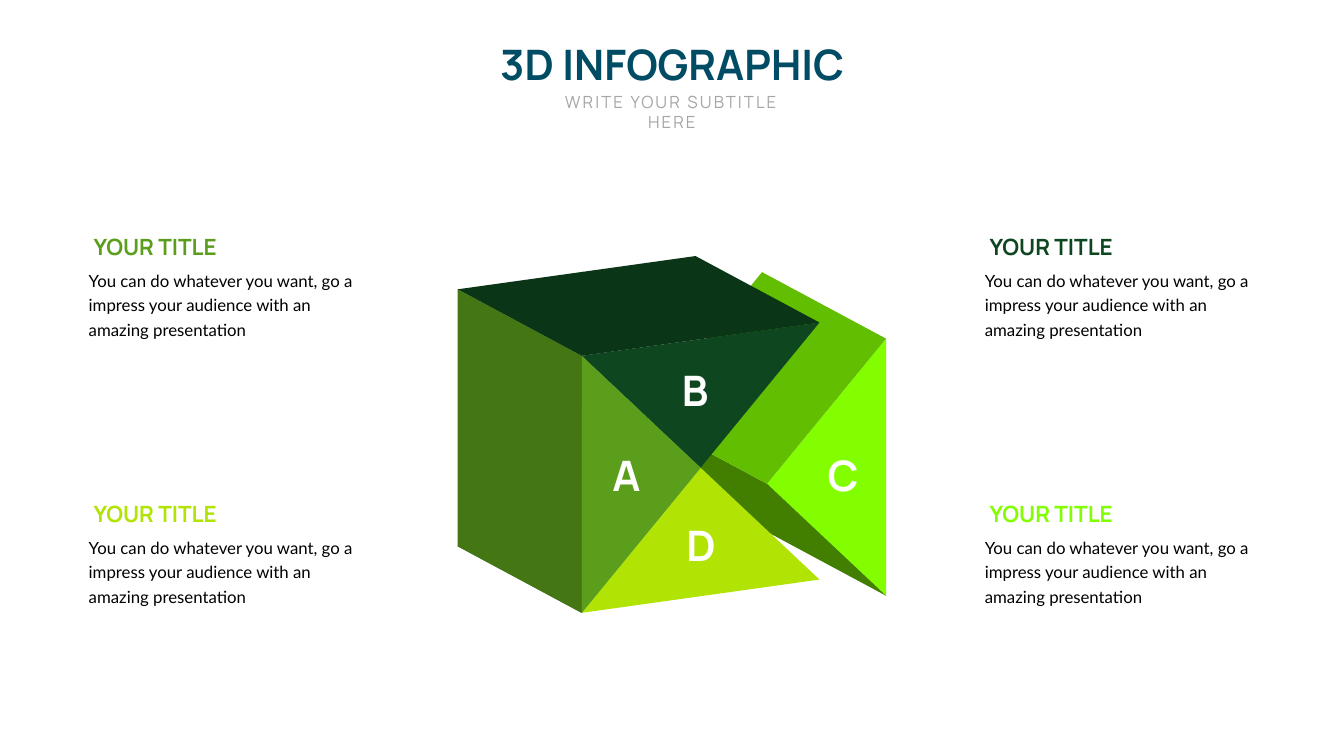
from pptx import Presentation
from pptx import util as u
from pptx.dml import color
from pptx.enum import text

WHITE, LEAF, FOREST, LIME, NEON = "FFFFFF", "5B9E1B", "0E461F", "B1E305", "83FE00"
GRID_COLUMNS, GRID_ROWS = 133.33, 75
DEPTH = (-12.3, -6.6)


def cells(count):
    return u.Inches(count / 10)


def rgb(value):
    return color.RGBColor.from_string(value)


def assign(target, values):
    for key, value in values.items():
        setattr(target, key, value)


def pushed_back(corner):
    return corner[0] + DEPTH[0], corner[1] + DEPTH[1]


def side(near, far):
    return [near, pushed_back(near), pushed_back(far), far]


class Infographic:
    display = {"name": "Manrope", "bold": True}
    subtitle = {"name": "Manrope", "size": u.Pt(12)}
    body = {"name": "Lato", "size": u.Pt(12)}
    top = {"vertical_anchor": text.MSO_ANCHOR.TOP}
    middle = {"vertical_anchor": text.MSO_ANCHOR.MIDDLE}
    tight = {"margin_left": cells(0.5), "margin_right": cells(0.5),
             "margin_top": cells(0.3), "margin_bottom": cells(0.3)}
    centred = {"alignment": text.PP_ALIGN.CENTER}

    def __init__(self, deck):
        self.slide = deck.slides.add_slide(deck.slide_layouts[5])

    def set_words(self, holder, words, hue, font, frame, paragraph, wrap=False, tracking=None):
        words_frame = holder.text_frame
        assign(words_frame, {"word_wrap": wrap, **frame,
                             "auto_size": text.MSO_AUTO_SIZE.SHAPE_TO_FIT_TEXT})
        line = words_frame.paragraphs[0]
        assign(line, paragraph)
        run = line.add_run()
        run.text = words
        assign(run.font, font)
        run.font.color.rgb = rgb(hue)
        if tracking:
            run.font._element.set("spc", str(tracking))

    def title(self, box, words, hue):
        heading = self.slide.shapes.title
        assign(heading, dict(zip(("left", "top", "width", "height"), map(cells, box))))
        self.set_words(heading, words, hue, {**self.display, "size": u.Pt(30)},
                       self.top, self.centred)

    def label(self, box, *content, **options):
        holder = self.slide.shapes.add_textbox(*map(cells, box))
        self.set_words(holder, *content, **options)

    def face(self, corners, hue):
        start, *rest = [tuple(map(cells, corner)) for corner in corners]
        builder = self.slide.shapes.build_freeform(*start)
        builder.add_line_segments(rest, close=True)
        panel = builder.convert_to_shape()
        panel.shadow.inherit = False
        panel.fill.solid()
        panel.fill.fore_color.rgb = rgb(hue)
        panel.line.fill.background()

    def cube(self):
        top_left, top_right = (57.7, 35.3), (81.3, 32)
        bottom_left, bottom_right = (57.7, 60.8), (81.3, 57.5)
        centre = (69.5, 46.4)
        tip, upper, lower = (76.1, 48), (87.9, 33.6), (87.9, 59.1)
        for corners, hue in (
            ([upper, lower, tip], NEON),
            (side(lower, tip), "427F00"),
            (side(tip, upper), "62BE00"),
            ([centre, bottom_right, bottom_left], LIME),
            (side(bottom_left, centre), "417F67"),
            ([top_right, centre, top_left], FOREST),
            (side(centre, top_left), "4E5E69"),
            (side(top_left, top_right), "0B3517"),
            ([top_left, centre, bottom_left], LEAF),
            (side(bottom_left, top_left), "447614"),
        ):
            self.face(corners, hue)

    def letter(self, name, left, top):
        self.label((left, top, 5.1, 6.1), name, WHITE,
                   {**self.display, "size": u.Pt(30)}, self.middle, self.centred)

    def note(self, left, top, hue):
        self.label((left, top + 3.5, 27.8, 7.8),
                   "You can do whatever you want, go a impress your audience "
                   "with an amazing presentation",
                   "000000", self.body, self.tight, {"line_spacing": u.Pt(17.5)}, wrap=True)
        self.label((left, top, 14.4, 3.7), "YOUR TITLE", hue,
                   {**self.display, "size": u.Pt(16)}, self.middle, {})


def main():
    deck = Presentation()
    assign(deck, {"slide_width": cells(GRID_COLUMNS), "slide_height": cells(GRID_ROWS)})
    page = Infographic(deck)
    page.title((47.4, 3.3, 38.6, 6.1), "3D INFOGRAPHIC", "004C64")
    page.cube()
    page.label((53.4, 8.6, 26.5, 3), "WRITE YOUR SUBTITLE HERE", "A6A6A6",
               page.subtitle, page.top, page.centred, wrap=True, tracking=150)
    for row, hues in enumerate(((LEAF, FOREST), (LIME, NEON))):
        for column, hue in enumerate(hues):
            page.note(8.3 + 88.9 * column, 22.6 + 26.5 * row, hue)
    for name, left, top in (("A", 59.6, 44), ("D", 67, 51), ("B", 66.4, 35.6), ("C", 81.1, 44)):
        page.letter(name, left, top)
    deck.save("out.pptx")


if __name__ == "__main__":
    main()
